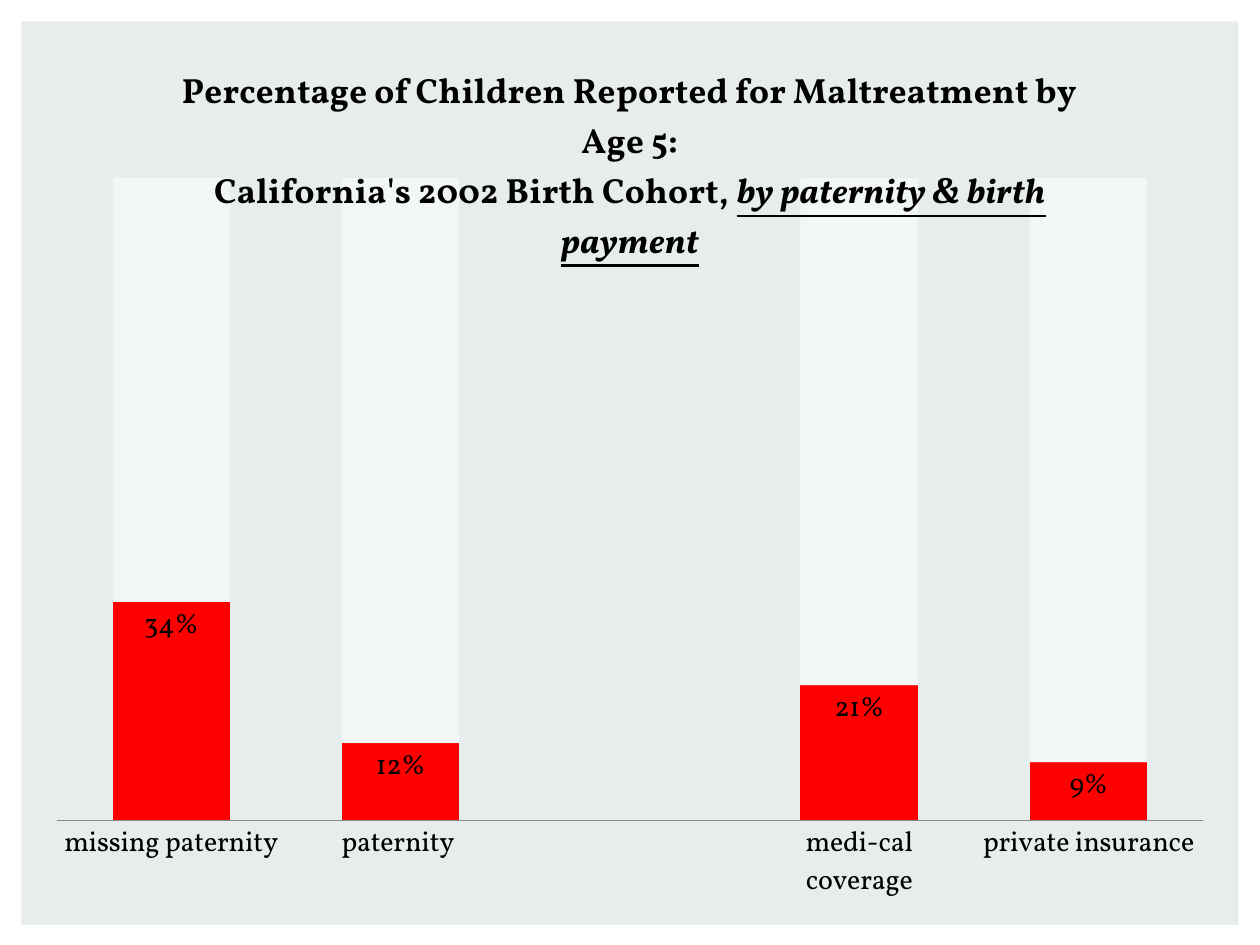
import pptx
import pptx.chart.data
import pptx.dml.color
import pptx.enum.chart
import pptx.enum.shapes
import pptx.oxml
import pptx.oxml.ns
import pptx.util
from dataclasses import dataclass

Inches = pptx.util.Inches
Pt = pptx.util.Pt
qn = pptx.oxml.ns.qn


@dataclass(frozen=True)
class Theme:
    font: str = "Vollkorn"
    text: str = "000000"
    panel: str = "E7ECED"
    reported: str = "FF0000"
    remainder: str = "FFFFFF"
    axis: str = "868686"
    title_size: int = 20
    label_size: int = 16
    base_size: int = 10


class SlideBuilder:
    def __init__(self, slide, theme):
        self.slide = slide
        self.theme = theme

    def color(self, value):
        return pptx.dml.color.RGBColor.from_string(value)

    def style_font(self, font, size, bold=False):
        font.name = self.theme.font
        font.size = Pt(size)
        font.bold = bold
        font.color.rgb = self.color(self.theme.text)

    def fill(self, target, value, opacity=None):
        target.fill.solid()
        target.fill.fore_color.rgb = self.color(value)
        if opacity is not None:
            for rgb in target._element.iter(qn("a:srgbClr")):
                alpha = pptx.oxml.parse_xml(
                    f'<a:alpha {pptx.oxml.ns.nsdecls("a")} val="{opacity * 1000}"/>')
                rgb.append(alpha)

    def panel(self, left, top, width, height):
        panel = self.slide.shapes.add_shape(
            pptx.enum.shapes.MSO_SHAPE.RECTANGLE,
            Inches(left), Inches(top), Inches(width), Inches(height))
        panel.shadow.inherit = False
        self.fill(panel, self.theme.panel)
        panel.line.fill.background()

    def stacked_chart(self, box, categories, series):
        data = pptx.chart.data.CategoryChartData()
        data.categories = categories
        for name, values in series:
            data.add_series(name, values)
        chart = self.slide.shapes.add_chart(
            pptx.enum.chart.XL_CHART_TYPE.COLUMN_STACKED_100,
            *map(Inches, box), data).chart
        chart.has_legend = False
        self.style_font(chart.font, self.theme.base_size)

        bars = chart.plots[0]
        bars.gap_width = 95
        bars.overlap = 100
        bars.vary_by_categories = False

        # Axes
        groups = chart.category_axis
        groups.major_tick_mark = pptx.enum.chart.XL_TICK_MARK.NONE
        groups.format.line.color.rgb = self.color(self.theme.axis)
        self.style_font(groups.tick_labels.font, self.theme.label_size)
        share = chart.value_axis
        share.visible = False
        share.has_major_gridlines = False
        share.minimum_scale, share.maximum_scale = 0, 1
        return chart

    def percent_labels(self, series):
        labels = series.data_labels
        labels.show_value = True
        labels.number_format = '0"%"'
        labels.number_format_is_linked = False
        labels.position = pptx.enum.chart.XL_LABEL_POSITION.INSIDE_END
        self.style_font(labels.font, self.theme.label_size)

    def overlay_title(self, chart, lines):
        title = chart.chart_title
        frame = title.text_frame
        for index, line in enumerate(lines):
            paragraph = frame.add_paragraph() if index else frame.paragraphs[0]
            for text, emphasised in line:
                run = paragraph.add_run()
                run.text = text
                self.style_font(run.font, self.theme.title_size, bold=True)
                run.font.italic = run.font.underline = emphasised
        title._element.find(qn("c:overlay")).set("val", "1")

    def place_plot(self, chart, x, y, w, h):
        area = chart._chartSpace.chart.plotArea
        for old in area.findall(qn("c:layout")):
            area.remove(old)
        modes = '<c:layoutTarget val="inner"/><c:xMode val="edge"/><c:yMode val="edge"/>'
        edges = "".join(f'<c:{key} val="{value}"/>'
                        for key, value in zip("xywh", (x, y, w, h)))
        area.insert(0, pptx.oxml.parse_xml(
            f'<c:layout {pptx.oxml.ns.nsdecls("c")}>'
            f'<c:manualLayout>{modes}{edges}</c:manualLayout></c:layout>'))


def main():
    deck = pptx.Presentation()
    deck.slide_width, deck.slide_height = Inches(10), Inches(7.5)
    theme = Theme()
    builder = SlideBuilder(deck.slides.add_slide(deck.slide_layouts[6]), theme)

    # Background panel
    builder.panel(0.17, 0.17, 9.66, 7.17)

    # Reported share and what is left up to 100 %
    reported = [34, 12, None, 21, 9]
    remainder = [None if value is None else 100 - value for value in reported]
    chart = builder.stacked_chart(
        (0.26, 0.31, 9.48, 6.89),
        ["missing paternity", "paternity ", "", "medi-cal coverage", "private insurance"],
        [("Series 1", reported), ("Series 2", remainder)])
    reported_bars, remainder_bars = chart.plots[0].series
    builder.fill(reported_bars.format, theme.reported) 
    builder.percent_labels(reported_bars)
    remainder_bars.format.fill.solid()
    remainder_bars.format.fill.fore_color.rgb = builder.color(theme.remainder)
    for rgb in remainder_bars._element.iter(qn("a:srgbClr")):
        rgb.append(pptx.oxml.parse_xml(
            f'<a:alpha {pptx.oxml.ns.nsdecls("a")} val="54000"/>'))
    builder.place_plot(chart, 0.02, 0.16, 0.96, 0.74)

    # Title over the columns
    builder.overlay_title(chart, [
        [("Percentage of Children Reported for Maltreatment by Age 5:", False)],
        [("California's 2002 Birth Cohort, ", False),
         ("by paternity & birth payment", True)],
    ])

    deck.save("out.pptx")


if __name__ == "__main__":
    main()
